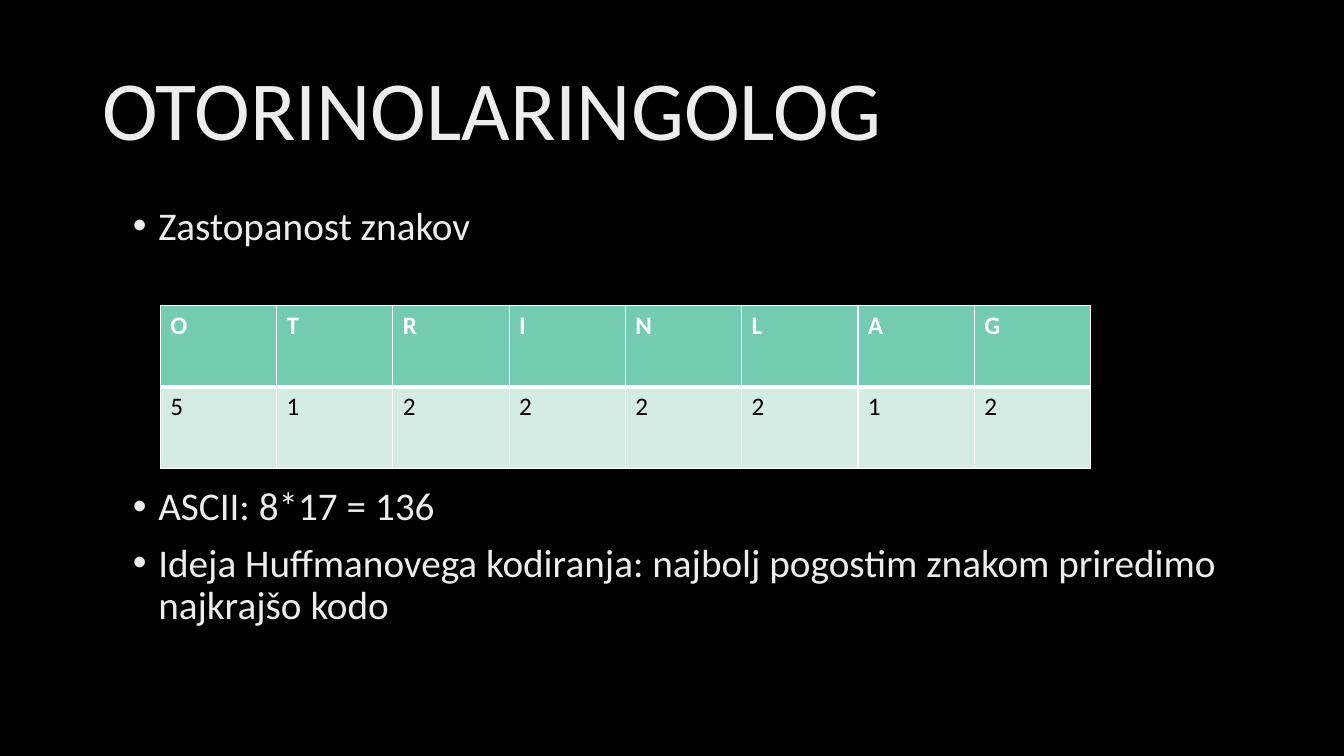
from pptx import Presentation
from pptx.dml.color import RGBColor
from pptx.enum.text import MSO_ANCHOR, MSO_AUTO_SIZE, PP_ALIGN
from pptx.oxml import parse_xml
from pptx.oxml.ns import nsdecls
from pptx.util import Cm, Pt

LEFT = PP_ALIGN.LEFT
MIDDLE = MSO_ANCHOR.MIDDLE
NO_FIT = MSO_AUTO_SIZE.NONE
COLOURS = {
    "background": "000000",
    "text": "EDEDED",
    "header": "73CBB2",
    "count": "D5ECE4",
    "white": "FFFFFF",
    "black": "000000",
}
FREQUENCIES = {"O": 5, "T": 1, "R": 2, "I": 2, "N": 2, "L": 2, "A": 1, "G": 2}
POINTS = [
    ("Zastopanost znakov", 0),
    ("ASCII: 8*17 = 136", 170),
    ("Ideja Huffmanovega kodiranja: najbolj pogostim znakom priredimo najkrajšo kodo", 10),
]


class SlideBuilder:
    """Draw titles, bullet lists and tables in one style on the current slide."""

    def __init__(self, presentation, font="Calibri"):
        self.font = font
        self.slide = presentation.slides.add_slide(presentation.slide_layouts[5])
        background = self.slide.background.fill
        background.solid()
        background.fore_color.rgb = self.colour("background")

    def colour(self, name):
        return RGBColor.from_string(COLOURS[name])

    def style(self, paragraph, size, colour, bold=False):
        paragraph.alignment = LEFT
        font = paragraph.font
        font.name, font.size, font.bold = self.font, Pt(size), bold
        font.color.rgb = self.colour(colour)

    def title(self, text, left, top, width, height):
        heading = self.slide.shapes.title
        heading.left, heading.top = Cm(left), Cm(top)
        heading.width, heading.height = Cm(width), Cm(height)
        frame = heading.text_frame
        frame.text = text
        frame.auto_size, frame.word_wrap = NO_FIT, True
        frame.vertical_anchor = MIDDLE
        frame.paragraphs[0].line_spacing = 0.9
        self.style(frame.paragraphs[0], 60, "text")

    def bullets(self, points, left, top, width, height, indent=0.64):
        box = self.slide.shapes.add_textbox(Cm(left), Cm(top), Cm(width), Cm(height))
        frame = box.text_frame
        frame.word_wrap = True
        for index, (text, space) in enumerate(points):
            paragraph = frame.add_paragraph() if index else frame.paragraphs[0]
            paragraph.text = text
            paragraph.line_spacing = 0.9
            paragraph.space_before = Pt(space)
            properties = paragraph._p.get_or_add_pPr()
            properties.set("marL", str(Cm(indent)))
            properties.set("indent", str(-Cm(indent)))
            properties.append(parse_xml(f'<a:buFont {nsdecls("a")} typeface="Arial"/>'))
            properties.append(parse_xml(f'<a:buChar {nsdecls("a")} char="•"/>'))
            self.style(paragraph, 28, "text")

    def borders(self, cell, widths):
        properties = cell._tc.get_or_add_tcPr()
        for position, (side, width) in enumerate(widths.items()):
            properties.insert(position, parse_xml(
                f'<a:ln{side} {nsdecls("a")} w="{Pt(width)}"><a:solidFill>'
                f'<a:srgbClr val="{COLOURS["white"]}"/></a:solidFill></a:ln{side}>'))

    def table(self, frequencies, left, top, column_width, row_height):
        rows = [
            (frequencies.keys(), "header", "white", True, {"L": 1, "R": 1, "T": 1, "B": 3}),
            (frequencies.values(), "count", "black", False, {"L": 1, "R": 1, "T": 3, "B": 1}),
        ]
        columns = len(frequencies)
        table = self.slide.shapes.add_table(
            len(rows), columns, Cm(left), Cm(top),
            Cm(column_width * columns), Cm(row_height * len(rows))).table
        for column in table.columns:
            column.width = Cm(column_width)
        for row, (values, fill, colour, bold, widths) in enumerate(rows):
            table.rows[row].height = Cm(row_height)
            for column, value in enumerate(values):
                cell = table.cell(row, column)
                cell.text = str(value)
                cell.fill.solid()
                cell.fill.fore_color.rgb = self.colour(fill)
                self.borders(cell, widths)
                self.style(cell.text_frame.paragraphs[0], 18, colour, bold)


def main():
    presentation = Presentation()
    presentation.slide_width, presentation.slide_height = Cm(33.87), Cm(19.05)
    builder = SlideBuilder(presentation)
    builder.title("OTORINOLARINGOLOG", 2.33, 1.02, 29.21, 3.68)
    builder.bullets(POINTS, 3.1, 5.08, 28.42, 12.09)
    builder.table(FREQUENCIES, 4.04, 7.7, 2.93, 2.05)
    presentation.save("out.pptx")


if __name__ == "__main__":
    main()
